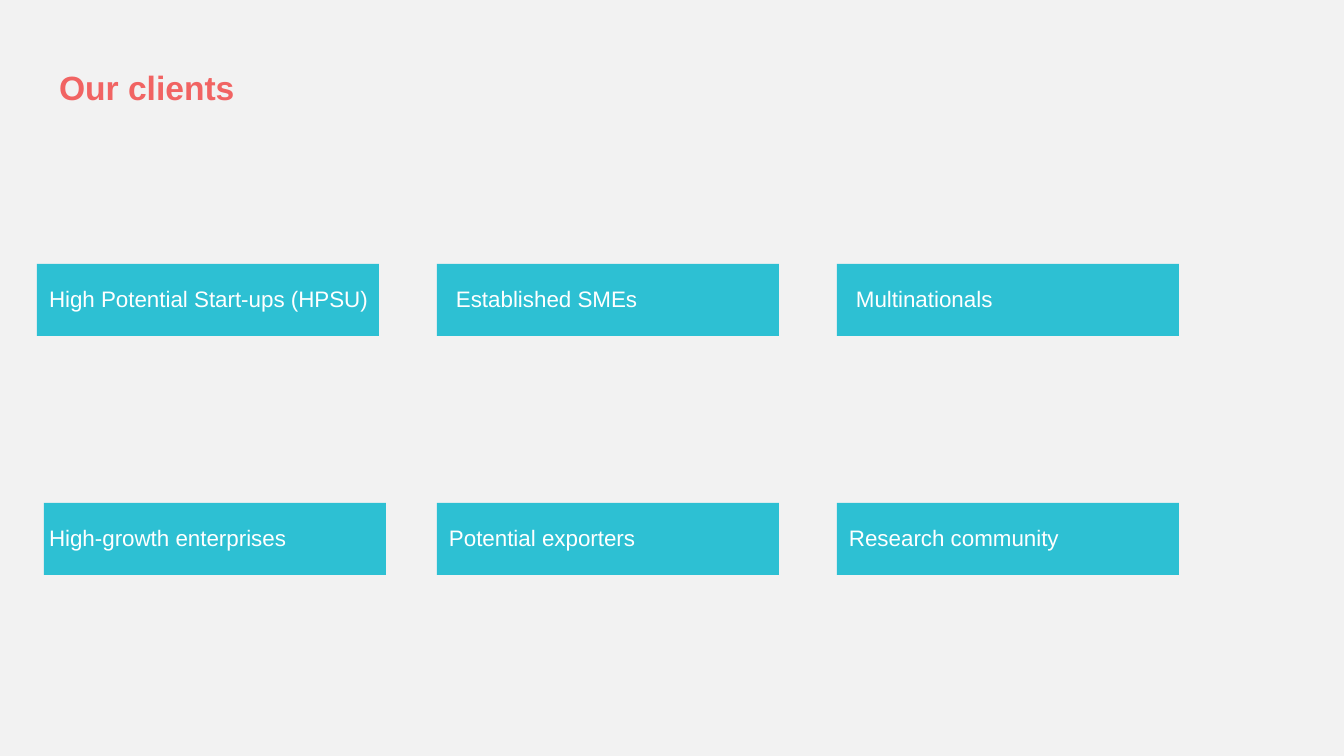
from pptx import Presentation
from pptx import util as u
from pptx.dml.color import RGBColor
from pptx.enum import shapes, text

PX = u.Inches(1) / 100.8
COLORS = {"backdrop": "F2F2F2", "bar": "2DC0D3", "title": "F16463", "label": "FFFFFF"}


def px(*lengths):
    return [u.Emu(round(length * PX)) for length in lengths]


def add_text(slide, words, box, size, color, bold=False):
    frame = slide.shapes.add_textbox(*px(*box)).text_frame
    frame.word_wrap = True
    frame.auto_size = text.MSO_AUTO_SIZE.SHAPE_TO_FIT_TEXT
    frame.margin_left, frame.margin_top, frame.margin_right, frame.margin_bottom = px(5, 5, 5, 5)
    frame.text = words
    font = frame.paragraphs[0].runs[0].font
    font.name = "Arial"
    font.size = u.Pt(size)
    font.bold = bold
    font.color.rgb = RGBColor.from_string(COLORS[color])


deck = Presentation()
deck.slide_width, deck.slide_height = px(1344, 756)
slide = deck.slides.add_slide(deck.slide_layouts[6])
slide.background.fill.solid()
slide.background.fill.fore_color.rgb = RGBColor.from_string(COLORS["backdrop"])

add_text(slide, "Our clients", (54, 62, 727, 50), 24, "title", bold=True)

FIRST_LEFT, FIRST_TOP = 37, 264
COLUMN_STEP, ROW_STEP = 400, 239
BAR_WIDTH, BAR_HEIGHT = 342, 72

# each client: name, bar shift, label inset, label width
client_rows = [
    [("High Potential Start-ups (HPSU)", 0, 7, 331),
     ("Established SMEs", 0, 14, 310),
     ("Multinationals", 0, 14, 310)],
    [("High-growth enterprises", 7, 0, 331),
     ("Potential exporters", 0, 7, 331),
     ("Research community", 0, 7, 331)],
]

for row, clients in enumerate(client_rows):
    for column, (client, shift, inset, label_width) in enumerate(clients):
        left = FIRST_LEFT + column * COLUMN_STEP + shift
        top = FIRST_TOP + row * ROW_STEP
        bar = slide.shapes.add_shape(
            shapes.MSO_SHAPE.RECTANGLE, *px(left, top, BAR_WIDTH, BAR_HEIGHT))
        bar.shadow.inherit = False
        bar.fill.solid()
        bar.fill.fore_color.rgb = RGBColor.from_string(COLORS["bar"])
        bar.line.fill.background()
        add_text(slide, client, (left + inset, top + 16, label_width, 37), 16, "label")

deck.save("out.pptx")
